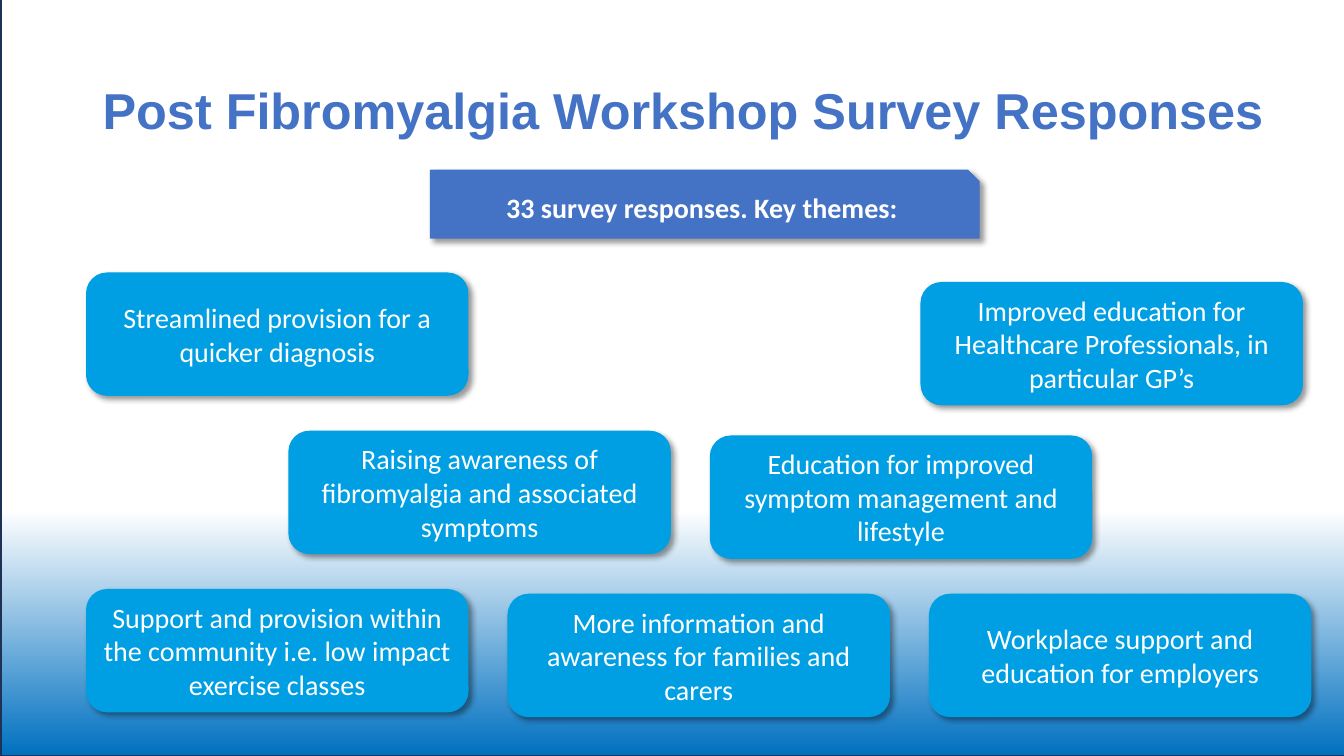
from dataclasses import dataclass

import pptx
import pptx.dml.color
import pptx.enum.shapes
import pptx.enum.text
import pptx.oxml
import pptx.oxml.ns
import pptx.util

RGBColor = pptx.dml.color.RGBColor
Shape = pptx.enum.shapes.MSO_SHAPE
Align = pptx.enum.text.PP_ALIGN

WHITE = RGBColor(0xFF, 0xFF, 0xFF)
NAVY = RGBColor(0x1E, 0x32, 0x56)
DEEP_BLUE = RGBColor(0x00, 0x70, 0xC0)
HEADING_BLUE = RGBColor(0x44, 0x72, 0xC4)
THEME_BLUE = RGBColor(0x00, 0x9F, 0xE3)

SLIDE_WIDTH, SLIDE_HEIGHT = 13.33, 7.5
GRID_LEFT, GRID_TOP = 0.86, 2.71
COLUMN_STEP, ROW_STEP = 4.18, 1.57
CARD_WIDTH, CARD_HEIGHT = 3.78, 1.21

SHADOW_XML = (
    f'<a:outerShdw {pptx.oxml.ns.nsdecls("a")} blurRad="50800" dist="38100" '
    'dir="2700000" algn="tl" rotWithShape="0">'
    '<a:srgbClr val="000000"><a:alpha val="40000"/></a:srgbClr></a:outerShdw>'
)


@dataclass(frozen=True)
class Area:
    """A place on the slide, in inches."""
    left: float
    top: float
    width: float
    height: float

    def lengths(self) -> list[int]:
        sides = (self.left, self.top, self.width, self.height)
        return [pptx.util.Inches(side) for side in sides]


@dataclass(frozen=True)
class Theme:
    """A survey theme, placed by grid column and row."""
    column: float
    row: float
    text: str

    def area(self) -> Area:
        return Area(GRID_LEFT + self.column * COLUMN_STEP,
                    GRID_TOP + self.row * ROW_STEP, CARD_WIDTH, CARD_HEIGHT)


THEMES = [
    Theme(1.98, 0.06, "Improved education for Healthcare Professionals, in particular GP’s"),
    Theme(0.48, 1, "Raising awareness of fibromyalgia and associated symptoms"),
    Theme(1.48, 1.03, "Education for improved symptom management and lifestyle"),
    Theme(0, 0, "Streamlined provision for a quicker diagnosis"),
    Theme(0, 2, "Support and provision within the community i.e. low impact exercise classes"),
    Theme(1, 2.03, "More information and awareness for families and carers"),
    Theme(2, 2.03, "Workplace support and education for employers"),
]


def write_text(box, text: str, font: str, size: float, color: RGBColor,
               bold: bool, alignment) -> None:
    frame = box.text_frame
    frame.word_wrap = True
    frame.vertical_anchor = pptx.enum.text.MSO_ANCHOR.MIDDLE
    frame.text = text
    para = frame.paragraphs[0]
    para.alignment = alignment
    span = para.runs[0]
    span.font.name = font
    span.font.size = pptx.util.Pt(size)
    span.font.bold = bold
    span.font.color.rgb = color


def add_backdrop(page) -> None:
    """Add the panel that fades from white to blue at the foot."""
    area = Area(0.01, SLIDE_HEIGHT - 7.86, 13.69, 7.86)
    panel = page.shapes.add_shape(Shape.RECTANGLE, *area.lengths())
    panel.shadow.inherit = False
    panel.fill.gradient()
    panel.fill.gradient_angle = 270
    stops = ((0.69, WHITE), (1, DEEP_BLUE))
    for stop, (position, color) in zip(panel.fill.gradient_stops, stops):
        stop.position = position
        stop.color.rgb = color
    panel.line.color.rgb = NAVY
    panel.line.width = pptx.util.Pt(1)


def add_title(page, text: str) -> None:
    box = page.shapes.add_textbox(*Area(0.92, 0.4, 11.87, 1.45).lengths())
    write_text(box, text, "Arial", 36, HEADING_BLUE, True, Align.LEFT)
    box.text_frame.paragraphs[0].line_spacing = 0.9


def add_card(page, preset, area: Area, text: str, color: RGBColor,
             bold: bool = False) -> None:
    """Add a filled shape with a soft shadow and centred white text."""
    card = page.shapes.add_shape(preset, *area.lengths())
    card.fill.solid()
    card.fill.fore_color.rgb = color
    card.line.color.rgb = color
    card.line.width = pptx.util.Pt(1)
    card.shadow.inherit = False
    effects = card.element.spPr.find(pptx.oxml.ns.qn("a:effectLst"))
    effects.append(pptx.oxml.parse_xml(SHADOW_XML))
    write_text(card, text, "Calibri", 20, WHITE, bold, Align.CENTER)


def main() -> None:
    deck = pptx.Presentation()
    deck.slide_width = pptx.util.Inches(SLIDE_WIDTH)
    deck.slide_height = pptx.util.Inches(SLIDE_HEIGHT)
    page = deck.slides.add_slide(deck.slide_layouts[6])
    add_backdrop(page)
    add_title(page, "Post Fibromyalgia Workshop Survey Responses")
    add_card(page, Shape.SNIP_1_RECTANGLE, Area(4.27, 1.69, 5.44, 0.67),
             "33 survey responses. Key themes:", HEADING_BLUE, bold=True)
    for theme in THEMES:
        add_card(page, Shape.ROUNDED_RECTANGLE, theme.area(), theme.text, THEME_BLUE)
    deck.save("out.pptx")


if __name__ == "__main__":
    main()
